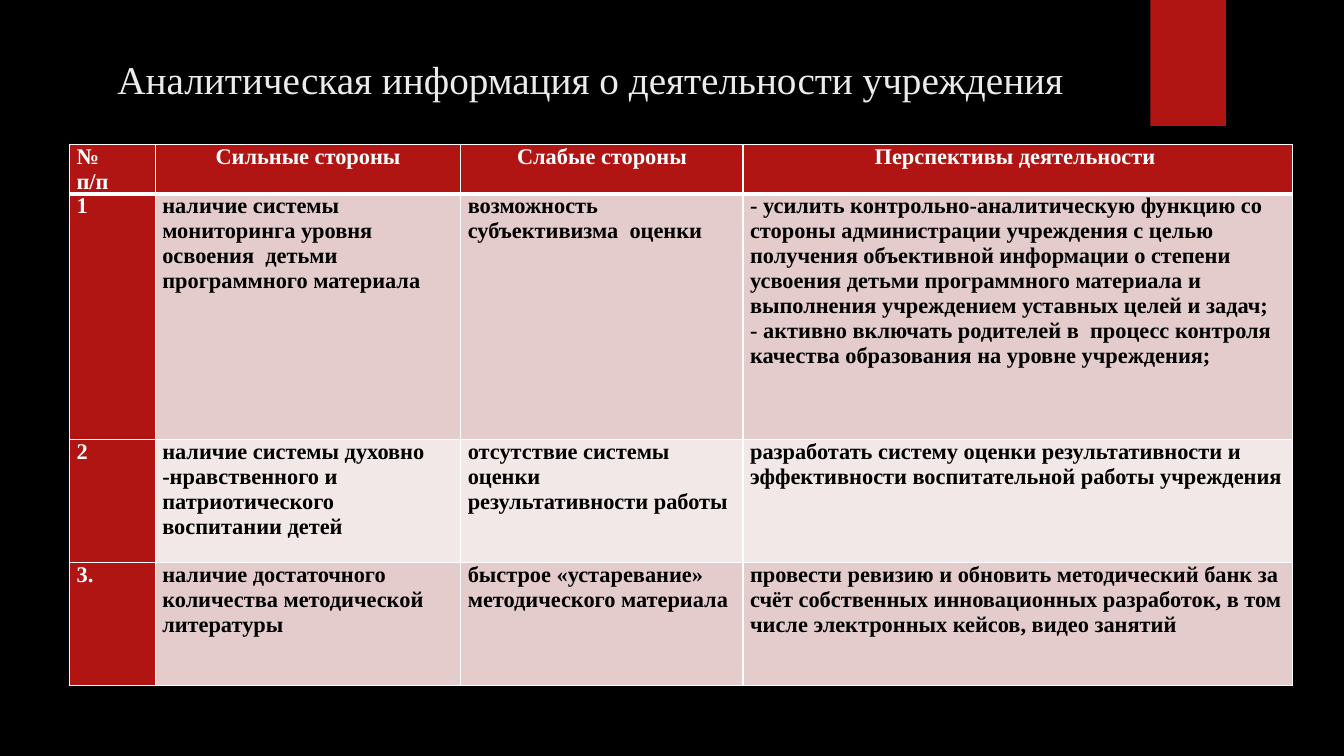
from lxml.etree import SubElement
from pptx import Presentation
from pptx.dml.color import RGBColor
from pptx.enum.shapes import MSO_SHAPE as Shape
from pptx.enum.text import MSO_ANCHOR as Anchor, MSO_AUTO_SIZE as AutoSize, PP_ALIGN as Align
from pptx.oxml.ns import qn
from pptx.util import Inches, Pt

TITLE = "Аналитическая информация о деятельности учреждения"
ROWS = [
    [["№", "п/п"], ["Сильные стороны"], ["Слабые стороны"], ["Перспективы деятельности "]],
    [
        ["1"],
        ["наличие системы мониторинга уровня освоения  детьми программного материала"],
        ["возможность субъективизма  оценки"],
        [
            "- усилить контрольно-аналитическую функцию со стороны администрации учреждения "
            "с целью получения объективной информации о степени усвоения детьми программного "
            "материала и выполнения учреждением уставных целей и задач;",
            "- активно включать родителей в  процесс контроля качества образования "
            "на уровне учреждения;",
        ],
    ],
    [
        ["2"],
        ["наличие системы духовно -нравственного и патриотического воспитании детей"],
        ["отсутствие системы оценки", "результативности работы"],
        ["разработать систему оценки результативности и эффективности "
         "воспитательной работы учреждения"],
    ],
    [
        ["3."],
        ["наличие достаточного количества методической литературы"],
        ["быстрое «устаревание» методического материала"],
        ["провести ревизию и обновить методический банк за счёт собственных "
         "инновационных разработок, в том числе электронных кейсов, видео занятий"],
    ],
]
COLUMN_WIDTHS = [0.85, 3.03, 2.8, 5.45]
ROW_HEIGHTS = [0.49, 2.44, 1.22, 1.22]
COLORS = {
    "background": "000000",
    "accent": "B01513",
    "odd_row": "E4CCCC",
    "even_row": "F2E8E7",
    "title": "EBEBEB",
    "white": "FFFFFF",
    "black": "000000",
}
FONT = "Times New Roman"


def color(name):
    return RGBColor.from_string(COLORS[name])


def add_text(paragraph, text, size, color_name, bold=False):
    run = paragraph.add_run()
    run.text = text
    run.font.name = FONT
    run.font.size = Pt(size)
    run.font.bold = bold
    run.font.color.rgb = color(color_name)


def set_borders(cell, widths):
    properties = cell._tc.get_or_add_tcPr()
    for index, (side, width) in enumerate(widths.items()):
        line = SubElement(properties, qn(f"a:ln{side}"), w=str(Pt(width)))
        fill = SubElement(line, qn("a:solidFill"))
        SubElement(fill, qn("a:srgbClr"), val=COLORS["white"])
        properties.insert(index, line)


def format_cell(cell, paragraphs, row, column):
    is_heading = row == 0 or column == 0
    fill_name = "accent" if is_heading else "odd_row" if row % 2 else "even_row"
    cell.fill.solid()
    cell.fill.fore_color.rgb = color(fill_name)
    cell.margin_left = cell.margin_right = Inches(0.07)
    cell.margin_top = cell.margin_bottom = 0
    cell.vertical_anchor = Anchor.TOP
    set_borders(cell, {"L": 1, "R": 1, "T": 3 if row == 1 else 1, "B": 3 if row == 0 else 1})
    frame = cell.text_frame
    for index, text in enumerate(paragraphs):
        paragraph = frame.add_paragraph() if index else frame.paragraphs[0]
        paragraph.alignment = Align.CENTER if row == 0 and column else Align.LEFT
        add_text(paragraph, text, 16, "white" if is_heading else "black", bold=True)


def add_analysis_table(slide):
    table = slide.shapes.add_table(
        len(ROWS), len(COLUMN_WIDTHS), Inches(0.69), Inches(1.43),
        Inches(sum(COLUMN_WIDTHS)), Inches(sum(ROW_HEIGHTS)),
    ).table
    for column, width in zip(table.columns, COLUMN_WIDTHS):
        column.width = Inches(width)
    for row, height in zip(table.rows, ROW_HEIGHTS):
        row.height = Inches(height)
    for row, cells in enumerate(ROWS):
        for column, paragraphs in enumerate(cells):
            format_cell(table.cell(row, column), paragraphs, row, column)


def add_title(slide):
    title = slide.shapes.title
    title.left, title.top = Inches(0.71), Inches(0.5)
    title.width, title.height = Inches(10.29), Inches(1.53)
    frame = title.text_frame
    frame.word_wrap = True
    frame.auto_size = AutoSize.NONE
    frame.vertical_anchor = Anchor.TOP
    paragraph = frame.paragraphs[0]
    paragraph.alignment = Align.CENTER
    add_text(paragraph, TITLE, 28, "title")


def add_ribbon(slide):
    ribbon = slide.shapes.add_shape(
        Shape.RECTANGLE, Inches(11.41), 0, Inches(0.75), Inches(1.25))
    ribbon.shadow.inherit = False
    ribbon.fill.solid()
    ribbon.fill.fore_color.rgb = color("accent")
    ribbon.line.fill.background()


def main():
    presentation = Presentation()
    presentation.slide_width = Inches(13.33)
    presentation.slide_height = Inches(7.5)
    slide = presentation.slides.add_slide(presentation.slide_layouts[5])
    slide.background.fill.solid()
    slide.background.fill.fore_color.rgb = color("background")
    add_title(slide)
    add_ribbon(slide)
    add_analysis_table(slide)
    presentation.save("out.pptx")


if __name__ == "__main__":
    main()
